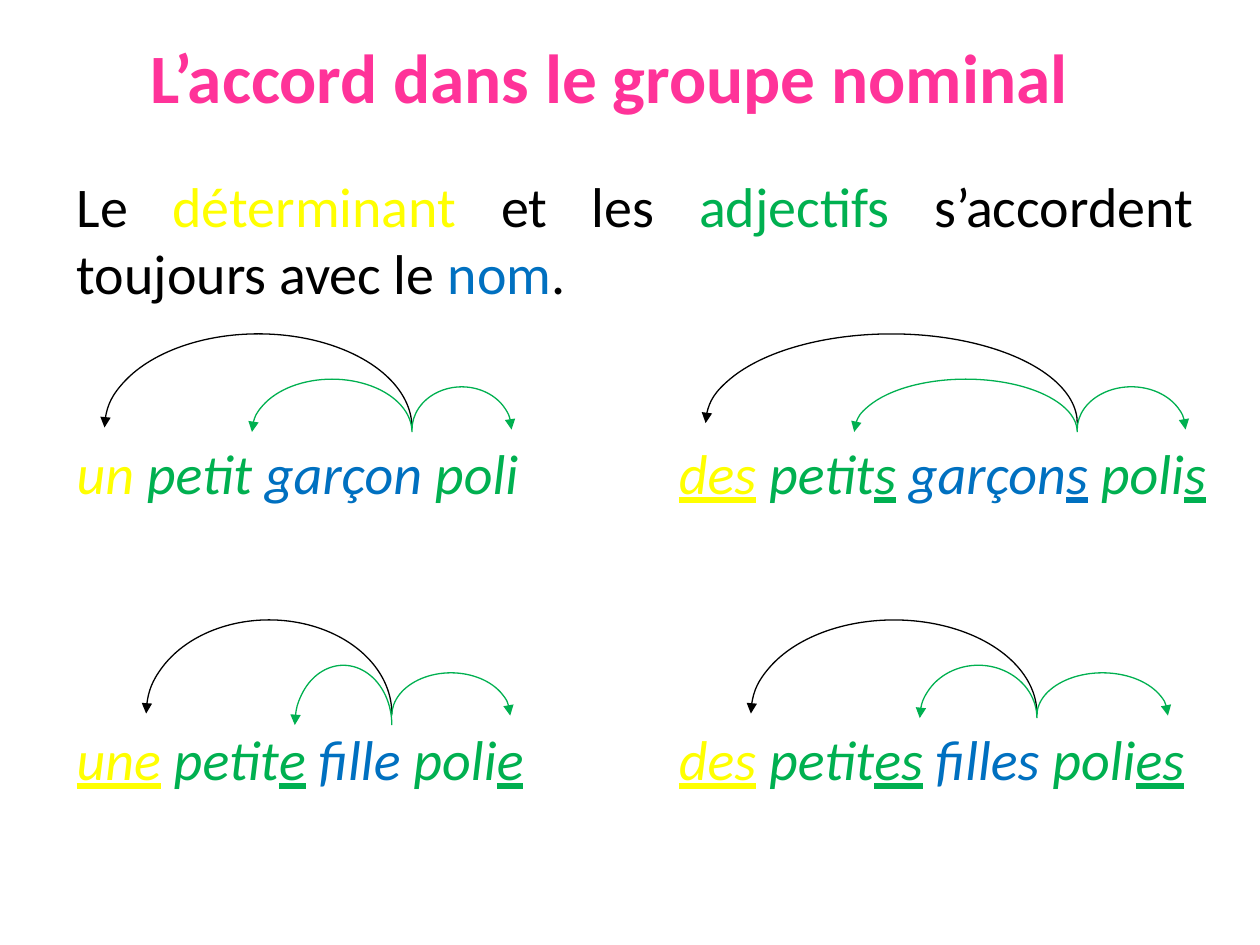
from dataclasses import dataclass

import pptx
import pptx.dml.color
import pptx.enum.shapes
import pptx.enum.text
import pptx.oxml
import pptx.oxml.ns
import pptx.util
from pptx.util import Inches

RGBColor = pptx.dml.color.RGBColor
Align = pptx.enum.text.PP_ALIGN
Anchor = pptx.enum.text.MSO_ANCHOR
AutoSize = pptx.enum.text.MSO_AUTO_SIZE

BLACK = RGBColor(0x00, 0x00, 0x00)
PINK = RGBColor(0xFF, 0x33, 0x99)
YELLOW = RGBColor(0xFF, 0xFF, 0x00)  # determiners
GREEN = RGBColor(0x00, 0xB0, 0x50)  # adjectives
BLUE = RGBColor(0x00, 0x70, 0xC0)  # nouns

FONT = "Calibri"
LINE_WIDTH = pptx.util.Pt(0.75)
HALF_TURN = 108.05  # start angle of an arc, in 100000ths of its raw value
DETERMINER_RISE, BEFORE_RISE, AFTER_RISE = 0.78, 0.42, 0.36
AFTER_HEIGHT = 0.68


@dataclass
class Span:
    text: str
    color: RGBColor = BLACK
    underline: bool = False


@dataclass
class Word:
    stem: str
    ending: str  # the underlined mark of agreement
    color: RGBColor


@dataclass
class NounGroup:
    left: float
    top: float
    words: list[Word]
    determiner_x: float
    before_x: float
    noun_x: float
    after_x: float
    determiner_height: float = 1.49
    before_height: float = 0.84


def outline_text(span) -> None:
    """Give a run a thin black contour."""
    outline = pptx.oxml.parse_xml(
        f'<a:ln {pptx.oxml.ns.nsdecls("a")} w="{int(LINE_WIDTH)}">'
        f'<a:solidFill><a:srgbClr val="{BLACK}"/></a:solidFill></a:ln>'
    )
    span.font._element.insert(0, outline)


def add_text(page, spans: list[Span], *, left: float, top: float, width: float,
             height: float, size: float = 32, bold: bool = False,
             italic: bool = False, align=Align.JUSTIFY, anchor=Anchor.TOP,
             auto_size=AutoSize.SHAPE_TO_FIT_TEXT) -> None:
    box = page.shapes.add_textbox(Inches(left), Inches(top), Inches(width), Inches(height))
    frame = box.text_frame
    frame.word_wrap = True
    frame.auto_size = auto_size
    frame.vertical_anchor = anchor
    para = frame.paragraphs[0]
    para.alignment = align
    for part in spans:
        span = para.add_run()
        span.text = part.text
        span.font.name = FONT
        span.font.size = pptx.util.Pt(size)
        span.font.bold = bold
        span.font.italic = italic
        span.font.underline = part.underline
        span.font.color.rgb = part.color
        if part.color == YELLOW:
            outline_text(span)


def add_arc(page, noun_x: float, target_x: float, top: float, height: float,
            color: RGBColor) -> None:
    """Draw a half ellipse from the noun to the word that agrees with it."""
    arc = page.shapes.add_shape(
        pptx.enum.shapes.MSO_SHAPE.ARC, Inches(min(noun_x, target_x)), Inches(top),
        Inches(abs(noun_x - target_x)), Inches(height))
    arc.adjustments[0] = HALF_TURN
    arc.adjustments[1] = 0
    arc.shadow.inherit = False
    arc.fill.background()
    arc.line.color.rgb = color
    arc.line.width = LINE_WIDTH
    if target_x > noun_x:
        arc._element.spPr.get_or_add_xfrm().set("flipH", "1")
    arc.line._get_or_add_ln().append(pptx.oxml.parse_xml(
        f'<a:headEnd {pptx.oxml.ns.nsdecls("a")} type="triangle"/>'))


def phrase_spans(words: list[Word]) -> list[Span]:
    spans = []
    for word in words:
        if spans:
            spans.append(Span(" "))
        if word.stem:
            spans.append(Span(word.stem, word.color))
        if word.ending:
            spans.append(Span(word.ending, word.color, underline=True))
    return spans


def add_noun_group(page, group: NounGroup) -> None:
    add_text(page, phrase_spans(group.words), left=group.left, top=group.top,
             width=4.53, height=0.64, italic=True)
    arcs = [
        (group.determiner_x, DETERMINER_RISE, group.determiner_height, BLACK),
        (group.before_x, BEFORE_RISE, group.before_height, GREEN),
        (group.after_x, AFTER_RISE, AFTER_HEIGHT, GREEN),
    ]
    for target_x, rise, height, color in arcs:
        add_arc(page, group.noun_x, target_x, group.top - rise, height, color)


LEFT, RIGHT = 0.51, 5.29
MASCULINE_TOP, FEMININE_TOP = 3.43, 5.7

RULE = [
    Span("Le "), Span("déterminant", YELLOW), Span(" et les "),
    Span("adjectifs", GREEN), Span(" s’accordent toujours avec le "),
    Span("nom", BLUE), Span("."),
]

GROUPS = [
    NounGroup(LEFT, MASCULINE_TOP,
              [Word("un", "", YELLOW), Word("petit", "", GREEN),
               Word("garçon", "", BLUE), Word("poli", "", GREEN)],
              determiner_x=0.83, before_x=2, noun_x=3.27, after_x=4.06),
    NounGroup(LEFT, FEMININE_TOP,
              [Word("", "une", YELLOW), Word("petit", "e", GREEN),
               Word("fille", "", BLUE), Word("poli", "e", GREEN)],
              determiner_x=1.16, before_x=2.34, noun_x=3.11, after_x=4.05,
              before_height=0.95),
    NounGroup(RIGHT, FEMININE_TOP,
              [Word("", "des", YELLOW), Word("petit", "es", GREEN),
               Word("filles", "", BLUE), Word("poli", "es", GREEN)],
              determiner_x=5.96, before_x=7.3, noun_x=8.23, after_x=9.27),
    NounGroup(RIGHT, MASCULINE_TOP,
              [Word("", "des", YELLOW), Word("petit", "s", GREEN),
               Word("garçon", "s", BLUE), Word("poli", "s", GREEN)],
              determiner_x=5.6, before_x=6.78, noun_x=8.55, after_x=9.41,
              determiner_height=1.42),
]


def main() -> None:
    deck = pptx.Presentation()
    deck.slide_width, deck.slide_height = Inches(10), Inches(7.5)
    page = deck.slides.add_slide(deck.slide_layouts[6])

    # Title
    add_text(page, [Span("L’accord dans le groupe nominal", PINK)], left=0.5, top=0.3,
             width=8.67, height=0.61, size=39.6, bold=True, align=Align.CENTER,
             anchor=Anchor.MIDDLE, auto_size=AutoSize.NONE)

    # Rule
    add_text(page, RULE, left=LEFT, top=1.31, width=9.06, height=1.18)

    # Examples with their agreement arrows
    for group in GROUPS:
        add_noun_group(page, group)

    deck.save("out.pptx")


if __name__ == "__main__":
    main()
